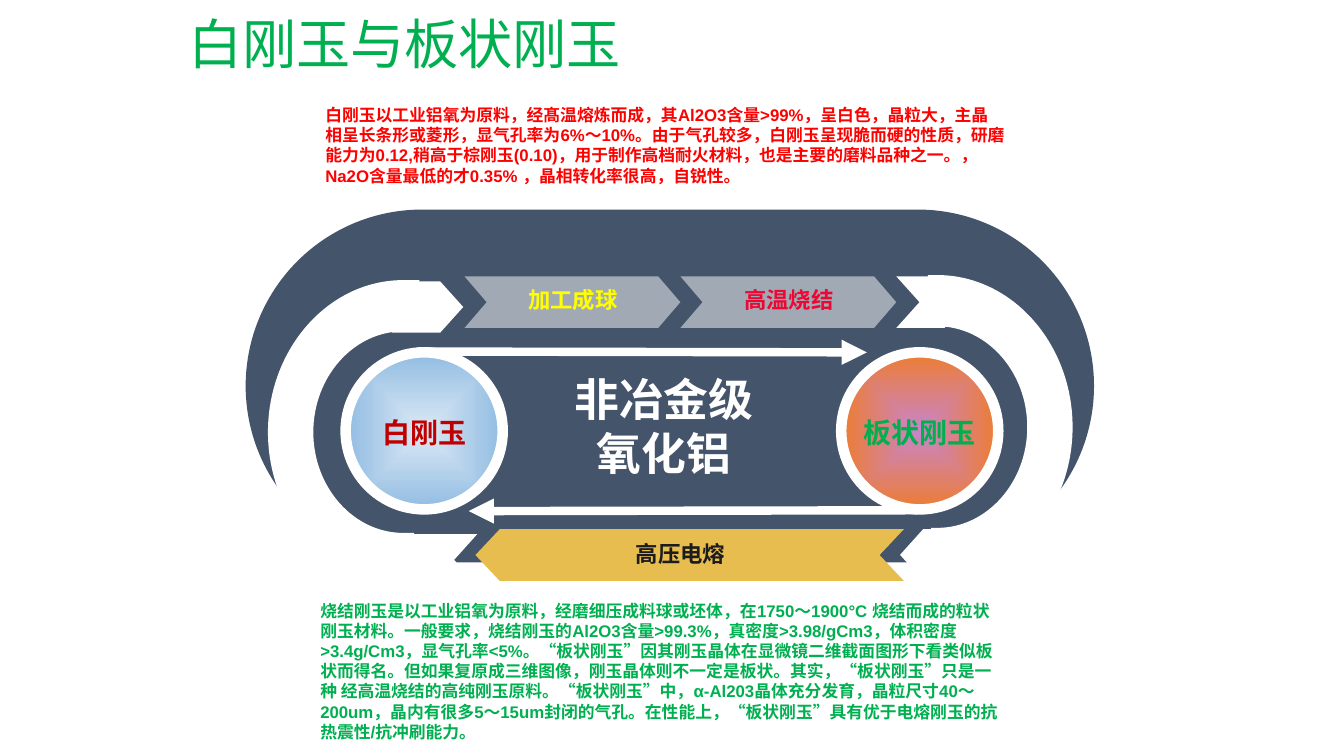
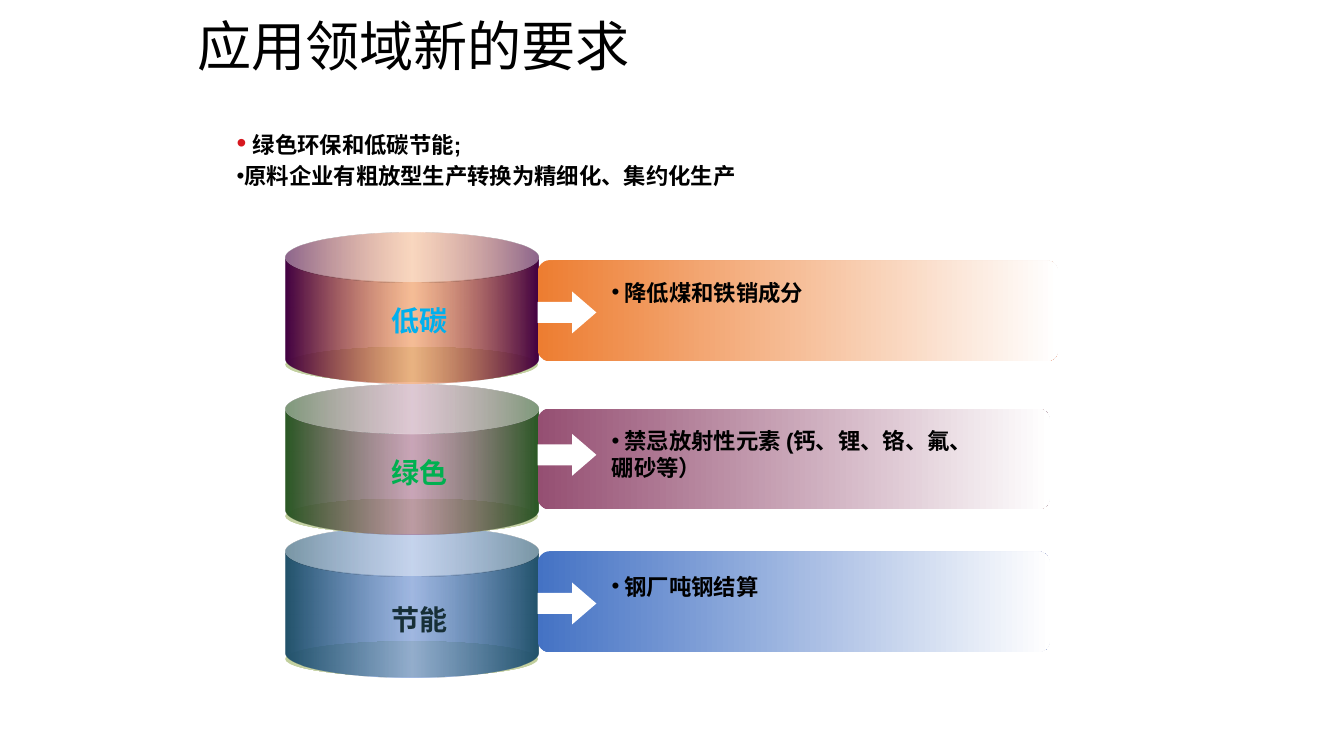
from lxml.etree import SubElement
from pptx import Presentation
from pptx.dml.color import RGBColor
from pptx.enum.shapes import MSO_CONNECTOR, MSO_SHAPE as SHAPE
from pptx.enum.text import MSO_ANCHOR, MSO_AUTO_SIZE, PP_ALIGN as ALIGN
from pptx.oxml.ns import qn
from pptx.util import Pt

# Grid: 160 columns by 90 rows of square cells
COLS, ROWS, CELL = 160, 90, 76200
KAPPA = 0.55  # handle length of a quarter-ellipse curve

WHITE = RGBColor(0xFF, 0xFF, 0xFF)
BLACK = RGBColor(0x00, 0x00, 0x00)
INK = RGBColor(0x1C, 0x1C, 0x1C)
SLATE = RGBColor(0x44, 0x54, 0x6A)
GOLD = RGBColor(0xE8, 0xBD, 0x50)
YELLOW = RGBColor(0xFF, 0xFF, 0x00)
GREEN = RGBColor(0x00, 0xB0, 0x50)
RED = RGBColor(0xFF, 0x00, 0x00)
CRIMSON = RGBColor(0xEB, 0x09, 0x34)
DARK_RED = RGBColor(0xC0, 0x00, 0x00)
BULLET_RED = RGBColor(0xD7, 0x18, 0x1F)
ORANGE = RGBColor(0xED, 0x7D, 0x31)
ORCHID = RGBColor(0xC9, 0x84, 0xC9)
PALE_BLUE = RGBColor(0xDB, 0xE9, 0xF5)
SKY = RGBColor(0x92, 0xBC, 0xE2)
BLUE = RGBColor(0x44, 0x72, 0xC4)
PLUM = RGBColor(0x95, 0x4F, 0x72)
TEAL = RGBColor(0x22, 0x52, 0x6A)
FOREST = RGBColor(0x2A, 0x58, 0x24)
AUBERGINE = RGBColor(0x42, 0x01, 0x42)
CYAN = RGBColor(0x00, 0xB0, 0xEE)
NIGHT = RGBColor(0x17, 0x2F, 0x37)
OLIVE = RGBColor(0xC1, 0xCF, 0x9D)
PALE_OLIVE = RGBColor(0xE5, 0xEB, 0xD5)


def add_part(slide, kind, box, colors, adj=None, alpha=None, radial=False, turn=0):
    """Add a borderless shape; several colors make a gradient, alpha fades its middle."""
    part = slide.shapes.add_shape(kind, *(round(v * CELL) for v in box))
    part.shadow.inherit = False
    part.line.fill.background()
    part.rotation = turn
    if adj is not None:
        part.adjustments[0] = adj
    if len(colors) == 1:
        part.fill.solid()
        part.fill.fore_color.rgb = colors[0]
        faded = part._element.spPr.find(".//" + qn("a:srgbClr"))
    else:
        part.fill.gradient()
        gradient = part._element.spPr.find(qn("a:gradFill"))
        for child in list(gradient):
            gradient.remove(child)
        stops = SubElement(gradient, qn("a:gsLst"))
        tones = []
        for i, color in enumerate(colors):
            stop = SubElement(stops, qn("a:gs"), pos=str(100000 * i // (len(colors) - 1)))
            tones.append(SubElement(stop, qn("a:srgbClr"), val=str(color)))
        faded = tones[len(tones) // 2]
        if radial:
            focus = SubElement(gradient, qn("a:path"), path="shape")
            SubElement(focus, qn("a:fillToRect"), l="50000", t="50000", r="50000", b="50000")
        else:
            SubElement(gradient, qn("a:lin"), ang="0", scaled="1")
    if alpha:
        SubElement(faded, qn("a:alpha"), val=str(alpha * 1000))
    return part


def add_text(slide, box, paragraphs, align=ALIGN.CENTER, bullet=False, spacing=None):
    """Add bold text; each paragraph is a list of (text, size, color) runs."""
    frame = slide.shapes.add_textbox(*(round(v * CELL) for v in box)).text_frame
    frame.word_wrap = True
    for i, runs in enumerate(paragraphs):
        paragraph = frame.add_paragraph() if i else frame.paragraphs[0]
        paragraph.alignment = align
        if spacing:
            paragraph.line_spacing = spacing
        properties = paragraph._p.get_or_add_pPr()
        properties.set("hangingPunct", "0")
        if bullet:
            SubElement(properties, qn("a:buFont"), typeface="Arial")
            SubElement(properties, qn("a:buChar"), char="•")
        for text, size, color in runs:
            run = paragraph.add_run()
            run.text = text
            run.font.name, run.font.size, run.font.bold = "Arial", Pt(size), True
            run.font.color.rgb = color


prs = Presentation()
prs.slide_width, prs.slide_height = COLS * CELL, ROWS * CELL

# Slides and their titles
slides = []
for heading, left, top, color in [
    ("白刚玉与板状刚玉", 21.2, 1.3, GREEN),
    ("应用领域新的要求", 22.3, 1.5, BLACK),
]:
    slide = prs.slides.add_slide(prs.slide_layouts[5])
    title = slide.shapes.title
    title.left, title.top = round(left * CELL), round(top * CELL)
    title.width, title.height = 112 * CELL, round(8.6 * CELL)
    frame = title.text_frame
    frame.auto_size = MSO_AUTO_SIZE.NONE
    frame.vertical_anchor = MSO_ANCHOR.MIDDLE
    paragraph = frame.paragraphs[0]
    paragraph.alignment, paragraph.line_spacing = ALIGN.LEFT, 0.9
    run = paragraph.add_run()
    run.text = heading
    run.font.name, run.font.size = "Calibri", Pt(38.7)
    run.font.color.rgb = color
    slides.append(slide)
corundum, demands = slides

# Corundum cycle: track, flow arrows and the two products
add_part(corundum, SHAPE.ROUNDED_RECTANGLE, (29.25, 24.95, 101, 42), [SLATE], adj=0.5)
for x1, y1, x2, y2 in [(109.2, 60.75, 55.8, 60.85), (49.7, 41.85, 103.2, 41.95)]:
    flow = corundum.shapes.add_connector(
        MSO_CONNECTOR.STRAIGHT, *(round(v * CELL) for v in (x1, y1, x2, y2)))
    flow.line.color.rgb, flow.line.width = WHITE, Pt(6)
    SubElement(flow.line._get_or_add_ln(), qn("a:tailEnd"), type="triangle")
    SubElement(flow._element.spPr, qn("a:effectLst"))
for left, inner, outer in [(100.15, ORCHID, ORANGE), (41.15, PALE_BLUE, SKY)]:
    product = add_part(corundum, SHAPE.OVAL, (left, 41.95, 18.7, 18.7),
                       [inner, outer], radial=True)
    product.line.color.rgb, product.line.width = WHITE, Pt(7.5)

# Process steps along the top
for left in (55.3, 81):
    add_part(corundum, SHAPE.CHEVRON, (left, 32.9, 25.7, 6.15), [WHITE], adj=0.43, alpha=50)

# White half rings: centre, side, stub past the vertical, chevron tips
for cx, cy, side, stub, top_tip, bottom_tip in [
    (111.6, 50.85, 1, 0.07, (106.7, 32.9, 8.5, 6.15), (107.15, 63, 6.6, 6.1)),
    (48, 51.45, -1, 0.12, (46.65, 33.5, 8.5, 6.1), (46.4, 63.6, 10.4, 6.1)),
]:
    half = [(-stub, -1), (-stub, -1), (0, -1), (0, -1),
            (KAPPA, -1), (1, -KAPPA), (1, 0)]
    half += [(x, -y) for x, y in reversed(half[:-1])]
    points = [
        (round((cx + side * rx * x) * CELL), round((cy + ry * y) * CELL))
        for rx, ry, order in [(10.7, 12, half), (16.1, 18.1, half[::-1])]
        for x, y in order
    ]
    outline = corundum.shapes.build_freeform(*points[0], scale=1.0)
    outline.add_line_segments(points[1:], close=True)
    ring = outline.convert_to_shape()
    ring.shadow.inherit = False
    ring.fill.solid()
    ring.fill.fore_color.rgb = WHITE
    ring.line.fill.background()
    # Each three segments become one curve; the one joining both arcs stays straight
    track = ring._element.spPr.find(".//" + qn("a:path"))
    segments = track.findall(qn("a:lnTo"))
    for first in (0, 3, 6, 9, 13, 16, 19, 22):
        curve = SubElement(track, qn("a:cubicBezTo"))
        segments[first].addprevious(curve)
        for segment in segments[first:first + 3]:
            curve.append(segment[0])
            track.remove(segment)
    add_part(corundum, SHAPE.CHEVRON, top_tip, [WHITE], adj=0.45)
    add_part(corundum, SHAPE.CHEVRON, bottom_tip, [WHITE], adj=0.45, turn=180)
    if side == 1:
        add_part(corundum, SHAPE.CHEVRON, (56.6, 63, 51, 6.15), [GOLD], adj=0.47, turn=180)

# Labels on the cycle
for text, box, size, color in [
    ("高压电熔", (72.65, 63.7, 16.7, 4.4), 16, INK),
    ("加工成球", (59.85, 33.5, 16.7, 4.4), 16, YELLOW),
    ("高温烧结", (85.55, 33.5, 16.7, 4.4), 16, CRIMSON),
    ("白刚玉", (41.15, 48.85, 18.7, 5.2), 20, DARK_RED),
    ("板状刚玉", (100.1, 48.85, 18.7, 5.2), 20, GREEN),
]:
    add_text(corundum, box, [[(text, size, color)]])
add_text(corundum, (60.55, 43.7, 37, 14),
         [[("非冶金级", 32, WHITE)], [("氧化铝", 32, WHITE)]])

# Descriptions above and below, split at the product names
white_text = (
    "白刚玉",
    "以工业铝氧为原料，经髙温熔炼而成，其Al2O3含量>99%，呈白色，晶粒大，主晶相呈长条形或菱形，"
    "显气孔率为6%〜10%。由于气孔较多，白刚玉呈现脆而硬的性质，研磨能力为0.12,稍高于棕刚玉(0.10)，"
    "用于制作高档耐火材料，也是主要的磨料品种之一。，Na2O含量最低的才0.35% ，晶相转化率很高，自锐性。",
)
tabular_text = (
    "烧结刚玉",
    "是以工业铝氧为原料，经磨细压成料球或坯体，在1750〜1900°C 烧结而成的粒状刚玉材料。"
    "一般要求，烧结刚玉的Al2O3含量>99.3%，真密度>3.98/gCm3，体积密度>3.4g/Cm3，显气孔率<5%。“",
    "板状刚玉",
    "”因其刚玉晶体在显微镜二维截面图形下看类似板状而得名。但如果复原成三维图像，"
    "刚玉晶体则不一定是板状。其实，“板状刚玉”只是一种 经高温烧结的高纯刚玉原料。“板状刚玉”中，"
    "α-Al203晶体充分发育，晶粒尺寸40〜200um，晶内有很多5〜15um封闭的气孔。在性能上，"
    "“板状刚玉”具有优于电熔刚玉的抗热震性/抗冲刷能力。",
)
for texts, box, color in [
    (white_text, (37.55, 11.9, 83.3, 13.2), RED),
    (tabular_text, (36.95, 70.9, 83.3, 18), GREEN),
]:
    add_text(corundum, box, [[(text, 12, color) for text in texts]], align=ALIGN.LEFT)

# Demands: cylinders from bottom to top, each with its bar, arrow and note
for (label, label_color, label_top, edge, core, can_top,
     bar_top, bar_width, arrow_top, note, note_top) in [
    ("节能", NIGHT, 71.1, TEAL, BLUE, 62.75,
     65.65, 61, 69.35, " 钢厂吨钢结算", 67.6),
    ("绿色", GREEN, 53.6, FOREST, PLUM, 45.75,
     48.65, 61, 51.65, " 禁忌放射性元素 (钙、锂、铬、氟、硼砂等）", 50.3),
    ("低碳", CYAN, 35.5, AUBERGINE, ORANGE, 27.7,
     31, 62, 34.7, " 降低煤和铁销成分", 32.6),
]:
    add_part(demands, SHAPE.OVAL, (33.95, can_top + 13.6, 30.1, 4.2),
             [OLIVE, PALE_OLIVE, OLIVE])
    add_part(demands, SHAPE.CAN, (34.05, can_top, 30.1, 17.9),
             [edge, core, edge], adj=0.33, alpha=50)
    add_part(demands, SHAPE.ROUNDED_RECTANGLE, (64, bar_top, bar_width, 12),
             [core, WHITE], adj=0.12)
    arrow = add_part(demands, SHAPE.RIGHT_ARROW, (64, arrow_top, 7, 5), [WHITE], adj=0.5)
    arrow.adjustments[1] = 0.58
    add_text(demands, (35.9, label_top, 28, 5.2), [[(label, 20, label_color)]])
    add_text(demands, (71.65, note_top, 47, 4.4), [[(note, 16, BLACK)]],
             align=ALIGN.LEFT, bullet=True)

# Demands: opening points
add_text(demands, (27, 14, 94.3, 9.1), [
    [(" ", 20, BULLET_RED), ("绿色环保和低碳节能;", 16, BLACK)],
    [("原料企业有粗放型生产转换为精细化、集约化生产", 16, BLACK)],
], align=ALIGN.LEFT, bullet=True, spacing=1.1)

prs.save("out.pptx")
